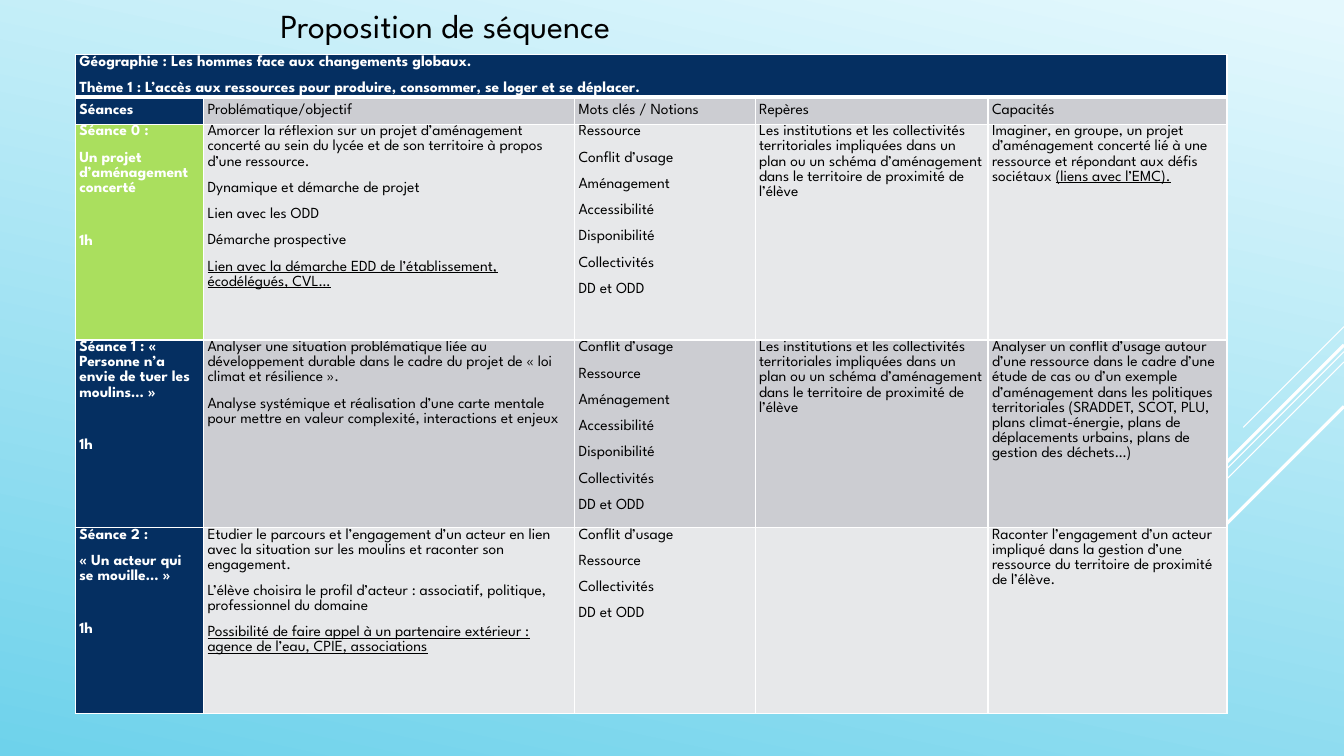
from dataclasses import dataclass

from lxml import etree
from pptx import Presentation
from pptx.dml.color import RGBColor
from pptx.enum.shapes import MSO_CONNECTOR
from pptx.enum.text import MSO_ANCHOR, MSO_AUTO_SIZE, PP_ALIGN
from pptx.oxml.ns import qn
from pptx.slide import Slide
from pptx.table import _Cell
from pptx.text.text import _Paragraph
from pptx.util import Cm, Pt

STRAIGHT = MSO_CONNECTOR.STRAIGHT
TOP, MIDDLE = MSO_ANCHOR.TOP, MSO_ANCHOR.MIDDLE
LEFT = PP_ALIGN.LEFT
NO_AUTOFIT = MSO_AUTO_SIZE.NONE

WHITE = RGBColor(0xFF, 0xFF, 0xFF)
BLACK = RGBColor(0x00, 0x00, 0x00)
NAVY = RGBColor(0x05, 0x2F, 0x61)
GREEN = RGBColor(0xAA, 0xDF, 0x5E)
GREY = RGBColor(0xCC, 0xCD, 0xD2)
PALE_GREY = RGBColor(0xE7, 0xE8, 0xEA)
SKY_LIGHT = RGBColor(0xE4, 0xF8, 0xFD)
SKY_DEEP = RGBColor(0x6E, 0xD2, 0xEB)

FONT = "League Spartan"
SLIDE_WIDTH = 33.87
COLUMN_WIDTHS = (3.23, 9.35, 4.55, 5.87, 6.02)
ROW_HEIGHTS = (1.07, 0.69, 5.44, 4.72, 4.7)
THIN, THICK = 1, 3


@dataclass(frozen=True)
class Ray:
    start_y: float
    reach: float
    weight: float


@dataclass(frozen=True)
class Passage:
    text: str = ""
    underlined: str = ""
    space_before: float = 0


@dataclass(frozen=True)
class Row:
    first_fill: RGBColor
    fill: RGBColor
    cells: tuple[tuple[Passage, ...], ...]
    anchor: MSO_ANCHOR = TOP
    top_border: float = THIN
    bottom_border: float = THIN


def passages(*texts: str) -> tuple[Passage, ...]:
    return tuple(Passage(text) for text in texts)


RAYS = (
    Ray(8.23, 2.54, 0.75),
    Ray(8.86, 8.28, 0.75),
    Ray(9.12, 5.27, 0.75),
    Ray(8.69, 4.85, 2.25),
    Ray(10.24, 3.53, 2.25),
)

DURATION = (Passage("1h", space_before=19),)
SHARED_NOTIONS = passages("Aménagement", "Accessibilité", "Disponibilité")
CLOSING_NOTIONS = passages("Collectivités", "DD et ODD")
CONFLICT_FIRST = passages("Conflit d’usage", "Ressource")
INSTITUTIONS = passages(
    "Les institutions et les collectivités territoriales impliquées dans un plan ou un "
    "schéma d’aménagement dans le territoire de proximité de l’élève"
)

ROWS = (
    Row(NAVY, NAVY, (
        passages(
            "Géographie : Les hommes face aux changements globaux.",
            "Thème 1 : L’accès aux ressources pour produire, consommer, se loger et se déplacer.",
        ), (), (), (), (),
    ), MIDDLE, bottom_border=THICK),
    Row(NAVY, GREY, (
        passages("Séances"),
        passages("Problématique/objectif"),
        passages("Mots clés / Notions"),
        passages("Repères"),
        passages("Capacités"),
    ), MIDDLE, top_border=THICK),
    Row(GREEN, PALE_GREY, (
        passages("Séance 0 :", "Un projet d’aménagement concerté") + DURATION,
        passages(
            "Amorcer la réflexion sur un projet d’aménagement concerté au sein du lycée "
            "et de son territoire à propos d’une ressource.",
            "Dynamique et démarche de projet",
            "Lien avec les ODD",
            "Démarche prospective",
        ) + (Passage(underlined="Lien avec la démarche EDD de l’établissement, écodélégués, CVL…"),),
        CONFLICT_FIRST[::-1] + SHARED_NOTIONS + CLOSING_NOTIONS,
        INSTITUTIONS,
        (Passage(
            "Imaginer, en groupe, un projet d’aménagement concerté lié à une ressource "
            "et répondant aux défis sociétaux ",
            "(liens avec l’EMC).",
        ),),
    )),
    Row(NAVY, GREY, (
        passages("Séance 1 : « Personne n’a envie de tuer les moulins… »") + DURATION,
        passages(
            "Analyser une situation problématique liée au développement durable dans le "
            "cadre du projet de « loi climat et résilience ».",
            "Analyse systémique et réalisation d’une carte mentale pour mettre en valeur "
            "complexité, interactions et enjeux",
        ),
        CONFLICT_FIRST + SHARED_NOTIONS + CLOSING_NOTIONS,
        INSTITUTIONS,
        passages(
            "Analyser un conflit d’usage autour d’une ressource dans le cadre d’une étude "
            "de cas ou d’un exemple d’aménagement dans les politiques territoriales "
            "(SRADDET, SCOT, PLU, plans climat-énergie, plans de déplacements urbains, "
            "plans de gestion des déchets…)"
        ),
    )),
    Row(NAVY, PALE_GREY, (
        passages("Séance 2 :", "« Un acteur qui se mouille… »") + DURATION,
        passages(
            "Etudier le parcours et l’engagement d’un acteur en lien avec la situation "
            "sur les moulins et raconter son engagement.",
            "L’élève choisira le profil d’acteur : associatif, politique, professionnel du domaine",
        ) + (Passage(underlined="Possibilité de faire appel à un partenaire extérieur : "
                                "agence de l’eau, CPIE, associations"),),
        CONFLICT_FIRST + CLOSING_NOTIONS,
        (),
        passages(
            "Raconter l’engagement d’un acteur impliqué dans la gestion d’une ressource "
            "du territoire de proximité de l’élève."
        ),
    )),
)


def add_run(paragraph: _Paragraph, text: str, size: float, color: RGBColor,
            bold: bool = False, underline: bool = False) -> None:
    run = paragraph.add_run()
    run.text = text
    run.font.name = FONT
    run.font.size = Pt(size)
    run.font.bold = bold
    run.font.underline = underline
    run.font.color.rgb = color


def paint_background(slide: Slide) -> None:
    fill = slide.background.fill
    fill.gradient()
    fill.gradient_angle = 258
    for stop, color, position in zip(fill.gradient_stops, (SKY_LIGHT, SKY_DEEP), (0.01, 1)):
        stop.color.rgb = color
        stop.position = position


def add_ray(slide: Slide, ray: Ray) -> None:
    line = slide.shapes.add_connector(
        STRAIGHT, Cm(SLIDE_WIDTH), Cm(ray.start_y),
        Cm(SLIDE_WIDTH - ray.reach), Cm(ray.start_y + ray.reach))
    line.line.color.rgb = WHITE
    line.line.width = Pt(ray.weight)
    etree.SubElement(line._element.spPr, qn("a:effectLst"))


def add_title(slide: Slide) -> None:
    title = slide.shapes.title
    title.left, title.top, title.width, title.height = Cm(6.81), Cm(0), Cm(10.82), Cm(1.27)
    frame = title.text_frame
    frame.word_wrap = True
    frame.auto_size = NO_AUTOFIT
    frame.vertical_anchor = TOP
    frame.paragraphs[0].alignment = LEFT
    add_run(frame.paragraphs[0], "Proposition de séquence", 24, BLACK)


def set_borders(cell: _Cell, top: float, bottom: float) -> None:
    properties = cell._tc.get_or_add_tcPr()
    for side, weight in (("lnL", THIN), ("lnR", THIN), ("lnT", top), ("lnB", bottom)):
        border = etree.SubElement(properties, qn(f"a:{side}"), w=str(Pt(weight)))
        solid = etree.SubElement(border, qn("a:solidFill"))
        etree.SubElement(solid, qn("a:srgbClr"), val=str(WHITE))


def fill_cell(cell: _Cell, row: Row, content: tuple[Passage, ...], is_heading: bool) -> None:
    set_borders(cell, row.top_border, row.bottom_border)
    cell.fill.solid()
    cell.fill.fore_color.rgb = row.first_fill if is_heading else row.fill
    cell.margin_left = cell.margin_right = Cm(0.1)
    cell.margin_top = cell.margin_bottom = 0
    cell.vertical_anchor = row.anchor
    color = WHITE if is_heading else BLACK
    for index, passage in enumerate(content):
        frame = cell.text_frame
        paragraph = frame.add_paragraph() if index else frame.paragraphs[0]
        paragraph.line_spacing = 1.07
        paragraph.space_after = Pt(8)
        if passage.space_before:
            paragraph.space_before = Pt(passage.space_before)
        for text, underline in ((passage.text, False), (passage.underlined, True)):
            if text:
                add_run(paragraph, text, 11, color, is_heading, underline)


def add_sequence_table(slide: Slide) -> None:
    table = slide.shapes.add_table(
        len(ROW_HEIGHTS), len(COLUMN_WIDTHS), Cm(1.9), Cm(1.37),
        Cm(sum(COLUMN_WIDTHS)), Cm(sum(ROW_HEIGHTS))).table
    table.first_row = table.horz_banding = False
    for column, width in zip(table.columns, COLUMN_WIDTHS):
        column.width = Cm(width)
    for table_row, height, row in zip(table.rows, ROW_HEIGHTS, ROWS):
        table_row.height = Cm(height)
        for index, (cell, content) in enumerate(zip(table_row.cells, row.cells)):
            fill_cell(cell, row, content, index == 0)
    table.cell(0, 0).merge(table.cell(0, len(COLUMN_WIDTHS) - 1))


def main() -> None:
    presentation = Presentation()
    presentation.slide_width, presentation.slide_height = Cm(SLIDE_WIDTH), Cm(19.05)
    slide = presentation.slides.add_slide(presentation.slide_layouts[5])
    paint_background(slide)
    for ray in RAYS:
        add_ray(slide, ray)
    add_sequence_table(slide)
    add_title(slide)
    presentation.save("out.pptx")


if __name__ == "__main__":
    main()
